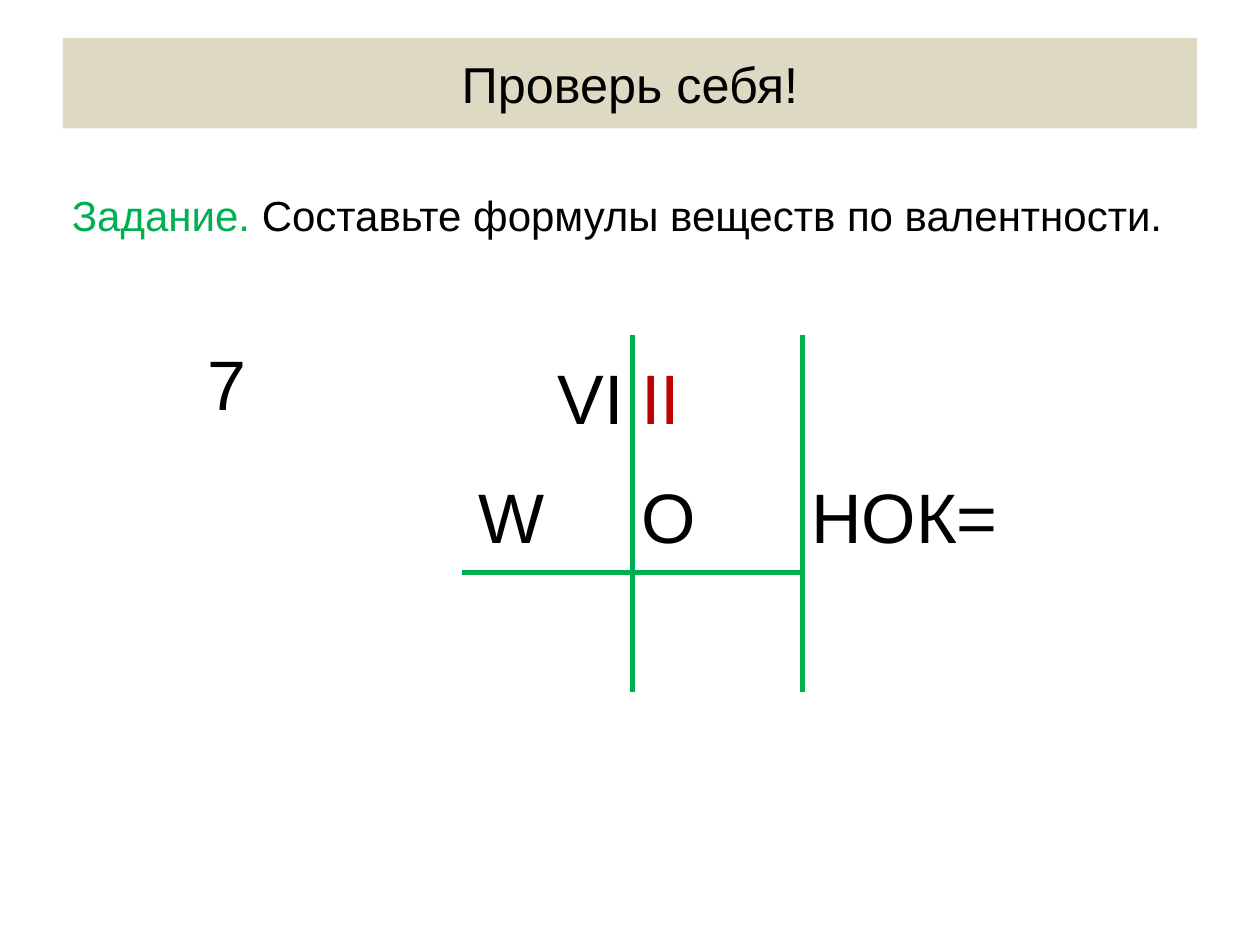
import dataclasses
import lxml.etree
import pptx
import pptx.dml.color
import pptx.enum.shapes
import pptx.enum.text
import pptx.oxml.ns
import pptx.util

Pt = pptx.util.Pt
Align = pptx.enum.text.PP_ALIGN
Anchor = pptx.enum.text.MSO_ANCHOR
qn = pptx.oxml.ns.qn


@dataclasses.dataclass(frozen=True)
class Theme:
    font: str = "Arial"
    ink: str = "000000"
    green: str = "00B050"
    red: str = "C00000"
    band: str = "DDD9C3"
    title: float = 28.8
    body: float = 24
    cell: float = 40
    rule: float = 3


THEME = Theme()
PLAIN = "{2D5ABB26-0587-4C30-8999-92F81FD0307C}"  # table style without grid


def rgb(color):
    return pptx.dml.color.RGBColor.from_string(color)


def style(run, size, color=THEME.ink):
    run.font.name = THEME.font
    run.font.size = Pt(size)
    run.font.bold = False
    run.font.color.rgb = rgb(color)


def add_title(slide, box, text):
    band = slide.shapes.add_shape(
        pptx.enum.shapes.MSO_SHAPE.RECTANGLE, *map(Pt, box))
    band.shadow.inherit = False
    band.fill.solid()
    band.fill.fore_color.rgb = rgb(THEME.band)
    band.line.fill.background()
    frame = band.text_frame
    frame.text = text
    frame.vertical_anchor = Anchor.MIDDLE
    para = frame.paragraphs[0]
    para.alignment = Align.CENTER
    style(para.runs[0], THEME.title)


def add_task(slide, box, label, text):
    frame = slide.shapes.add_textbox(*map(Pt, box)).text_frame
    frame.word_wrap = True
    para = frame.paragraphs[0]
    para.line_spacing = 1.7
    for part, color in ((label, THEME.green), (text, THEME.ink)):
        run = para.add_run()
        run.text = part
        style(run, THEME.body, color)


def add_edges(cell, sides):
    props = cell._tc.get_or_add_tcPr()
    for side in sides:
        line = lxml.etree.SubElement(
            props, qn("a:ln" + side), w=str(Pt(THEME.rule)))
        fill = lxml.etree.SubElement(line, qn("a:solidFill"))
        lxml.etree.SubElement(fill, qn("a:srgbClr"), val=THEME.green)


def fill_cell(cell, text, color=THEME.ink, align=Align.LEFT, right=5):
    cell.margin_left, cell.margin_right = Pt(5), Pt(right)
    cell.margin_top = cell.margin_bottom = 0
    cell.vertical_anchor = Anchor.MIDDLE
    cell.text = text
    para = cell.text_frame.paragraphs[0]
    para.alignment = align
    para.line_spacing = 1.15
    style(para.runs[0], THEME.cell, color)


def add_grid(slide, box):
    left, top, width, height = box
    table = slide.shapes.add_table(3, 4, *map(Pt, box)).table
    table.first_row = table.horz_banding = False
    table._tbl.tblPr.find(qn("a:tableStyleId")).text = PLAIN

    # Two equal middle columns between the number and the multiple
    middle = 97.2
    first = 150.4
    widths = (first, middle, middle, width - first - 2 * middle)
    for col, size in zip(table.columns, widths):
        col.width = Pt(size)
    for row in table.rows:
        row.height = Pt(height / 3)

    # Green rules, in the order left, right, top, bottom
    ends = ("", "B", "T")
    for row, end in enumerate(ends):
        for col, sides in enumerate(("", "R", "LR", "L")):
            cell = table.cell(row, col)
            add_edges(cell, sides + (end if col in (1, 2) else ""))
            cell.fill.background()

    # Outer columns span every row
    for col in (0, 3):
        table.cell(0, col).merge(table.cell(2, col))

    # Valences above, symbols below
    fill_cell(table.cell(0, 0), "7")
    table.cell(0, 0).vertical_anchor = Anchor.TOP
    fill_cell(table.cell(0, 1), "VI", align=Align.RIGHT)
    fill_cell(table.cell(0, 2), "II", THEME.red)
    fill_cell(table.cell(1, 1), "W", align=Align.RIGHT, right=50)
    fill_cell(table.cell(1, 2), "O")
    fill_cell(table.cell(0, 3), "НОК=")


def main():
    deck = pptx.Presentation()
    deck.slide_width, deck.slide_height = Pt(720), Pt(540)
    slide = deck.slides.add_slide(deck.slide_layouts[6])
    add_title(slide, (36, 21.6, 648, 51.8), "Проверь себя!")
    add_task(slide, (34, 84.4, 648, 62), "Задание. ",
             "Составьте формулы веществ по валентности.")
    add_grid(slide, (113.8, 191.5, 492.4, 203.7))
    deck.save("out.pptx")


if __name__ == "__main__":
    main()
